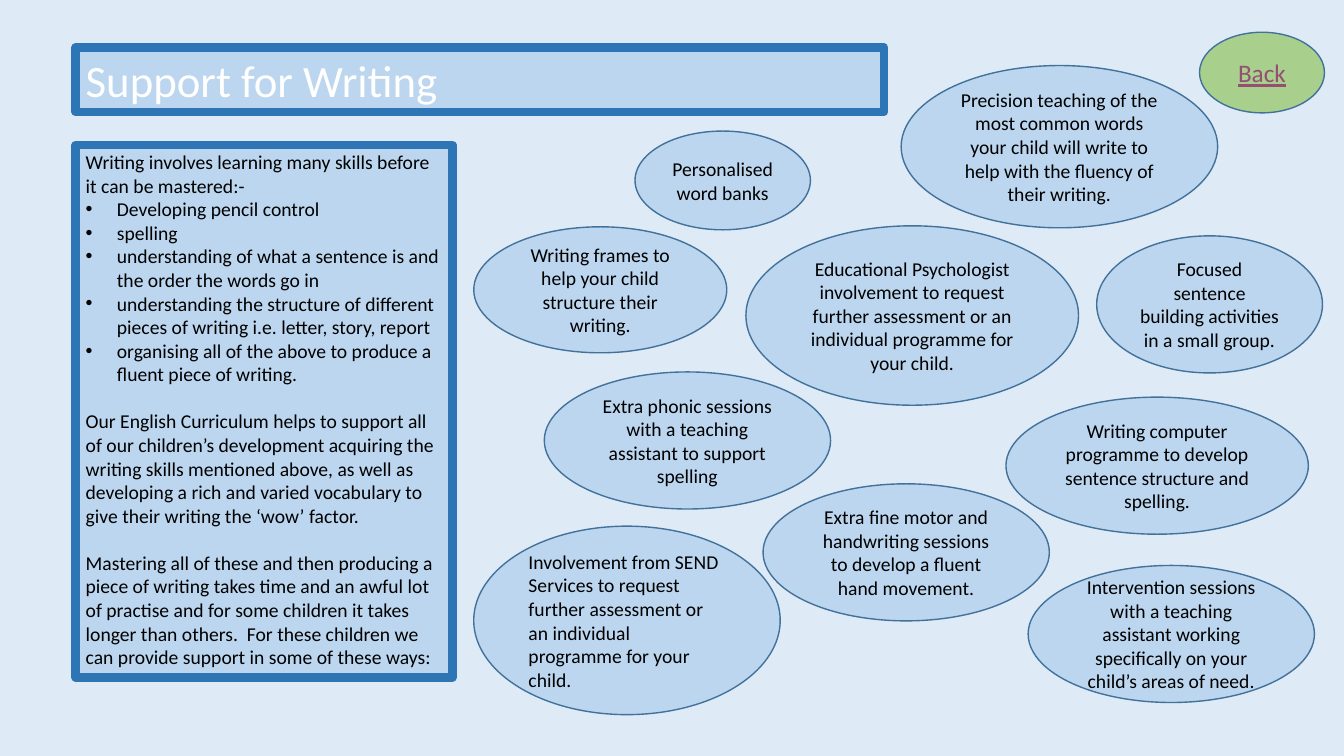
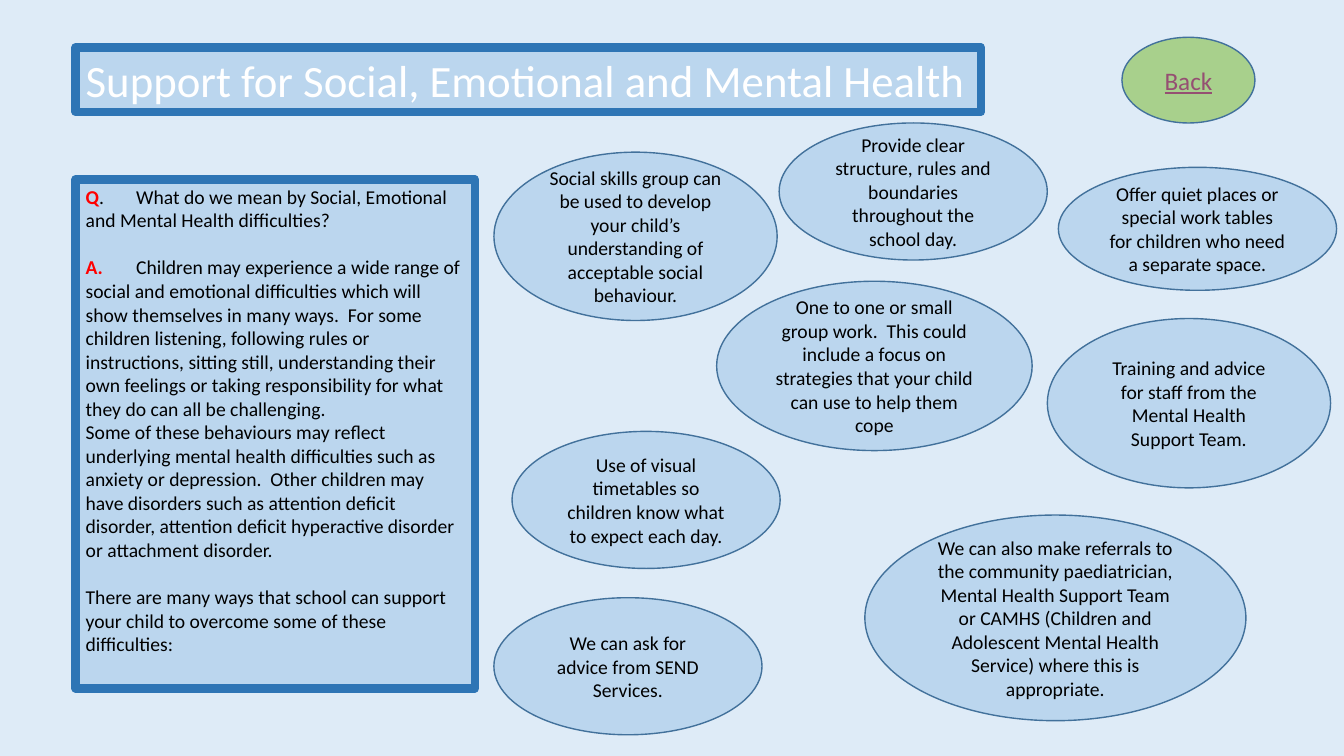
"""Build two slides on school support for pupils."""
from dataclasses import dataclass

from lxml import etree
from pptx import Presentation
from pptx.dml.color import RGBColor
from pptx.enum.shapes import MSO_SHAPE
from pptx.enum.text import MSO_ANCHOR, MSO_AUTO_SIZE, PP_ALIGN
from pptx.oxml.ns import qn
from pptx.util import Inches, Pt

ELLIPSE = MSO_SHAPE.OVAL
TOP, MIDDLE = MSO_ANCHOR.TOP, MSO_ANCHOR.MIDDLE
LEFT, CENTER = PP_ALIGN.LEFT, PP_ALIGN.CENTER
NO_FIT = MSO_AUTO_SIZE.NONE

PAGE = RGBColor(0xDE, 0xEB, 0xF7)
PANEL = RGBColor(0xBB, 0xD6, 0xEE)
FRAME = RGBColor(0x2E, 0x75, 0xB5)
OUTLINE = RGBColor(0x42, 0x71, 0x9B)
GREEN = RGBColor(0xA8, 0xD0, 0x8C)
PLUM = RGBColor(0x95, 0x4F, 0x72)
RED = RGBColor(0xFF, 0x00, 0x00)
BLACK = RGBColor(0x00, 0x00, 0x00)
WHITE = RGBColor(0xFF, 0xFF, 0xFF)

FONT = "Calibri"
CELL = Inches(0.1)
COLUMNS, ROWS = 133.33, 75
MARGIN, TITLE_TOP, TITLE_ROWS = 7.5, 4.7, 6.4
TITLE_SIZE, BACK_SIZE, TEXT_SIZE = Pt(32), Pt(18), Pt(14)
LINE_GAP = Pt(17)
BULLET_INDENT = Inches(0.31)
MARKER_TAB = Inches(0.5)


@dataclass
class Entry:
    """One paragraph of the explanation panel."""
    text: str
    bullet: bool = False
    gap: bool = False
    marker: str = ""
    marker_tail: str = ""


@dataclass
class Topic:
    """The content of one slide, with places in grid cells."""
    title: str
    title_columns: float
    back: tuple
    panel: tuple
    entries: list
    ideas: list


WRITING = Topic(
    title="Support for Writing",
    title_columns=80.2,
    back=(119, 3.2, 12.4, 8),
    panel=(MARGIN, 14.4, 37.4, 52.8),
    entries=[
        Entry("Writing involves learning many skills before it can be mastered:-"),
        Entry("Developing pencil control", bullet=True),
        Entry("spelling", bullet=True),
        Entry("understanding of what a sentence is and the order the words go in",
              bullet=True),
        Entry("understanding the structure of different pieces of writing i.e. "
              "letter, story, report", bullet=True),
        Entry("organising all of the above to produce a fluent piece of writing.",
              bullet=True),
        Entry("Our English Curriculum helps to support all of our children’s "
              "development acquiring the writing skills mentioned above, as well "
              "as developing a rich and varied vocabulary to give their writing "
              "the ‘wow’ factor.", gap=True),
        Entry("Mastering all of these and then producing a piece of writing takes "
              "time and an awful lot of practise and for some children it takes "
              "longer than others.  For these children we can provide support in "
              "some of these ways:", gap=True),
    ],
    ideas=[
        ((54, 36.9, 28.4, 13.6), CENTER,
         "Extra phonic sessions with a teaching assistant to support spelling"),
        ((108.8, 23.4, 22.4, 13.6), CENTER,
         "Focused sentence building activities in a small group."),
        ((99.8, 39.4, 30, 13.6), CENTER,
         "Writing computer programme to develop sentence structure and spelling."),
        ((102, 56.1, 28.4, 13.6), CENTER,
         "Intervention sessions with a teaching assistant working specifically "
         "on your child’s areas of need."),
        ((74, 22.4, 33, 17.8), CENTER,
         "Educational Psychologist involvement to request further assessment "
         "or an individual programme for your child."),
        ((47, 52.2, 30.4, 18.7), LEFT,
         "Involvement from SEND Services to request further assessment or an "
         "individual programme for your child."),
        ((63, 13, 17.4, 9.8), CENTER, "Personalised word banks"),
        ((89.4, 6.5, 31.4, 16.1), CENTER,
         "Precision teaching of the most common words your child will write to "
         "help with the fluency of their writing."),
        ((47, 22.5, 25.1, 12.5), CENTER,
         "Writing frames to help your child structure their writing."),
        ((75.7, 48, 28.4, 13.6), CENTER,
         "Extra fine motor and handwriting sessions to develop a fluent hand "
         "movement."),
    ],
)

WELLBEING = Topic(
    title="Support for Social, Emotional and Mental Health",
    title_columns=89.8,
    back=(111.3, 3.7, 13.2, 8.5),
    panel=(MARGIN, 17.8, 39.6, 50.5),
    entries=[
        Entry("What do we mean by Social, Emotional and Mental Health "
              "difficulties?", marker="Q", marker_tail="."),
        Entry("Children may experience a wide range of social and emotional "
              "difficulties which will show themselves in many ways.  For some "
              "children listening, following rules or instructions, sitting "
              "still, understanding their own feelings or taking responsibility "
              "for what they do can all be challenging.",
              gap=True, marker="A."),
        Entry("Some of these behaviours may reflect underlying mental health "
              "difficulties such as anxiety or depression.  Other children may "
              "have disorders such as attention deficit disorder, attention "
              "deficit hyperactive disorder or attachment disorder."),
        Entry("There are many ways that school can support your child to "
              "overcome some of these difficulties:", gap=True),
    ],
    ideas=[
        ((49, 15.1, 28.1, 16.7), CENTER,
         "Social skills group can be used to develop your child’s understanding "
         "of acceptable social behaviour."),
        ((71.1, 27.9, 31.3, 16.8), CENTER,
         "One to one or small group work.  This could include a focus on "
         "strategies that your child can use to help them cope"),
        ((105, 16.6, 27.6, 12.2), CENTER,
         "Offer quiet places or special work tables for children who need a "
         "separate space."),
        ((50.8, 42.8, 26.6, 13.6), CENTER,
         "Use of visual timetables so children know what to expect each day."),
        ((77.3, 12.2, 26.6, 13.6), CENTER,
         "Provide clear structure, rules and boundaries throughout the school "
         "day."),
        ((49, 59.3, 26.6, 13.6), CENTER,
         "We can ask for advice from SEND Services."),
        ((85.8, 51.1, 37.8, 20.4), CENTER,
         "We can also make referrals to the community paediatrician, Mental "
         "Health Support Team or CAMHS (Children and Adolescent Mental Health "
         "Service) where this is appropriate."),
        ((103.9, 31.6, 28.1, 16.8), CENTER,
         "Training and advice for staff from the Mental Health Support Team."),
    ],
)


def cells(*counts):
    """Turn counts of grid cells into lengths."""
    return [round(count * CELL) for count in counts]


def paint(shape, fill, line, weight):
    """Give a shape its fill and outline."""
    shape.fill.solid()
    shape.fill.fore_color.rgb = fill
    shape.line.color.rgb = line
    shape.line.width = weight


def add_run(paragraph, text, size=TEXT_SIZE, color=BLACK, bold=False, underline=False):
    """Append one formatted run."""
    run = paragraph.add_run()
    run.text = text
    run.font.name, run.font.size = FONT, size
    run.font.bold, run.font.underline = bold, underline
    run.font.color.rgb = color


def frame_placeholder(placeholder, place):
    """Move a placeholder, frame it and return its text frame."""
    placeholder.left, placeholder.top, placeholder.width, placeholder.height = cells(*place)
    paint(placeholder, PANEL, FRAME, Pt(6))
    words = placeholder.text_frame
    words.word_wrap, words.auto_size = True, NO_FIT
    words.vertical_anchor = TOP
    return words


def set_marks(paragraph, entry):
    """Set the bullet, indent and tab stop of a paragraph."""
    props = paragraph._p.get_or_add_pPr()
    indent = BULLET_INDENT if entry.bullet else 0
    props.set("marL", str(indent))
    props.set("indent", str(-indent))
    if entry.bullet:
        etree.SubElement(props, qn("a:buFont"), typeface="Arial")
        etree.SubElement(props, qn("a:buChar"), char="•")
    else:
        etree.SubElement(props, qn("a:buNone"))
    if entry.marker:
        stops = etree.SubElement(props, qn("a:tabLst"))
        etree.SubElement(stops, qn("a:tab"), pos=str(MARKER_TAB), algn="l")


def add_title(slide, topic):
    """Fill the title band."""
    band = (MARGIN, TITLE_TOP, topic.title_columns, TITLE_ROWS)
    heading = frame_placeholder(slide.shapes.title, band).paragraphs[0]
    heading.alignment = LEFT
    add_run(heading, topic.title, TITLE_SIZE, WHITE)


def add_panel(slide, topic):
    """Fill the explanation panel."""
    words = frame_placeholder(slide.placeholders[1], topic.panel)
    for number, entry in enumerate(topic.entries):
        paragraph = words.add_paragraph() if number else words.paragraphs[0]
        paragraph.alignment = LEFT
        paragraph.space_before = LINE_GAP if entry.gap else Pt(0)
        set_marks(paragraph, entry)
        if entry.marker:
            add_run(paragraph, entry.marker, color=RED, bold=True)
            add_run(paragraph, f"{entry.marker_tail}\t{entry.text}")
        else:
            add_run(paragraph, entry.text)


def add_bubble(slide, place, fill, align=CENTER):
    """Draw an ellipse and return its paragraph."""
    bubble = slide.shapes.add_shape(ELLIPSE, *cells(*place))
    bubble.shadow.inherit = False
    paint(bubble, fill, OUTLINE, Pt(1))
    words = bubble.text_frame
    words.word_wrap, words.vertical_anchor = True, MIDDLE
    words.paragraphs[0].alignment = align
    return words.paragraphs[0]


def add_topic(prs, topic):
    """Add the slide of one topic."""
    slide = prs.slides.add_slide(prs.slide_layouts[1])
    add_title(slide, topic)
    add_run(add_bubble(slide, topic.back, GREEN), "Back", BACK_SIZE, PLUM, underline=True)
    add_panel(slide, topic)
    for place, align, idea in topic.ideas:
        add_run(add_bubble(slide, place, PANEL, align), idea)


def main():
    """Build and save the deck."""
    prs = Presentation()
    prs.slide_width, prs.slide_height = cells(COLUMNS, ROWS)
    backdrop = prs.slide_master.background.fill
    backdrop.solid()
    backdrop.fore_color.rgb = PAGE
    for topic in (WRITING, WELLBEING):
        add_topic(prs, topic)
    prs.save("out.pptx")


if __name__ == "__main__":
    main()
